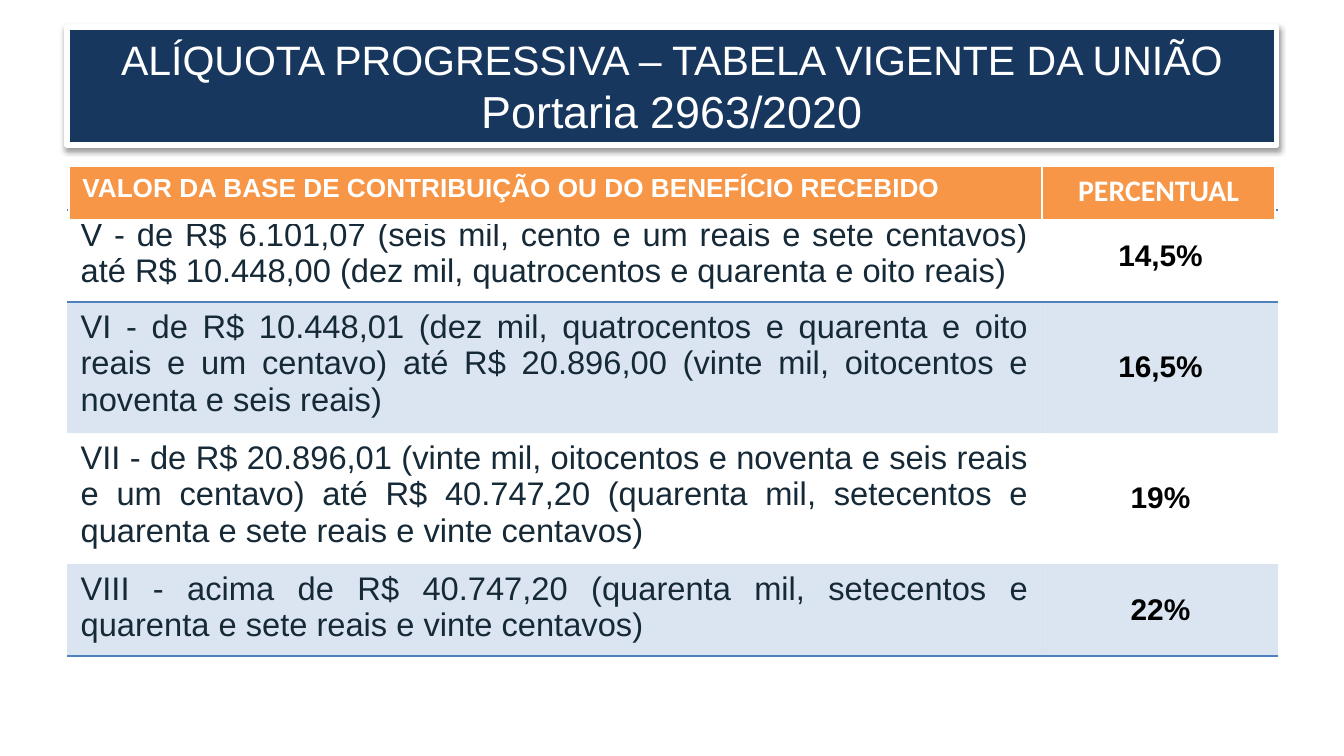
from lxml import etree
from pptx import Presentation
from pptx.dml.color import RGBColor as RGB
from pptx.enum.shapes import MSO_SHAPE as SHAPE
from pptx.enum.text import MSO_ANCHOR as ANCHOR, PP_ALIGN as ALIGN
from pptx.oxml import parse_xml
from pptx.oxml.ns import nsdecls, qn
from pptx.util import Pt

WHITE = RGB(0xFF, 0xFF, 0xFF)
BLACK = RGB(0, 0, 0)
NAVY = RGB(0x17, 0x37, 0x5E)
BLUE = RGB(0x4F, 0x81, 0xBD)
ORANGE = RGB(0xF7, 0x96, 0x46)
INK = RGB(0x16, 0x29, 0x37)

RATES = [
    ("V - de R$ 6.101,07 (seis mil, cento e um reais e sete centavos) até "
     "R$ 10.448,00 (dez mil, quatrocentos e quarenta e oito reais)", "14,5%"),
    ("VI - de R$ 10.448,01 (dez mil, quatrocentos e quarenta e oito reais e um "
     "centavo) até R$ 20.896,00 (vinte mil, oitocentos e noventa e seis reais)", "16,5%"),
    ("VII - de R$ 20.896,01 (vinte mil, oitocentos e noventa e seis reais e um "
     "centavo) até R$ 40.747,20 (quarenta mil, setecentos e quarenta e sete reais "
     "e vinte centavos)", "19%"),
    ("VIII - acima de R$ 40.747,20 (quarenta mil, setecentos e quarenta e sete "
     "reais e vinte centavos)", "22%"),
]
ROW_HEIGHTS = [49.3, 70.2, 70.2, 49.3]


def add_text(p, text, size, color, font="Arial", bold=False, align=ALIGN.LEFT):
    p.alignment = align
    r = p.add_run()
    r.text = text
    f = r.font
    f.name, f.size, f.bold = font, Pt(size), bold
    f.color.rgb = color


def set_borders(cell, **borders):
    """Take L, R, T, B as (colour, width); a side left out gets no line."""
    tcPr = cell._tc.get_or_add_tcPr()
    for i, side in enumerate("LRTB"):
        color, width = borders.get(side, (None, 0))
        fill = (f'<a:solidFill><a:srgbClr val="{color}"/></a:solidFill>'
                if color is not None else "<a:noFill/>")
        tcPr.insert(i, parse_xml(
            f'<a:ln{side} {nsdecls("a")} w="{Pt(width)}">{fill}</a:ln{side}>'))


def set_fill(cell, color=None, opacity=100):
    if color is None:
        cell.fill.background()
        return
    cell.fill.solid()
    cell.fill.fore_color.rgb = color
    if opacity < 100:
        clr = cell._tc.tcPr.find(qn("a:solidFill"))[0]
        etree.SubElement(clr, qn("a:alpha")).set("val", str(opacity * 1000))


def new_table(s, x, y, col_widths, row_heights):
    table = s.shapes.add_table(len(row_heights), len(col_widths), Pt(x), Pt(y),
                               Pt(sum(col_widths)), Pt(sum(row_heights))).table
    table.first_row = table.horz_banding = False
    for col, width in zip(table.columns, col_widths):
        col.width = Pt(width)
    for row, height in zip(table.rows, row_heights):
        row.height = Pt(height)
    return table


def add_title(s, x, y, w, h):
    sp = s.shapes.add_shape(SHAPE.RECTANGLE, Pt(x), Pt(y), Pt(w), Pt(h))
    sp.fill.solid()
    sp.fill.fore_color.rgb = NAVY
    sp.line.color.rgb = WHITE
    sp.line.width = Pt(3)
    # Soft shadow straight below
    sp._element.spPr.append(parse_xml(
        f'<a:effectLst {nsdecls("a")}><a:outerShdw blurRad="{Pt(3.1)}" '
        f'dist="{Pt(1.6)}" dir="5400000" rotWithShape="0"><a:srgbClr val="{BLACK}">'
        '<a:alpha val="38000"/></a:srgbClr></a:outerShdw></a:effectLst>'))
    tf = sp.text_frame
    tf.word_wrap = True
    tf.vertical_anchor = ANCHOR.MIDDLE
    p = tf.paragraphs[0]
    add_text(p, "ALÍQUOTA PROGRESSIVA – TABELA VIGENTE DA UNIÃO", 22, WHITE,
             align=ALIGN.CENTER)
    p.add_line_break()
    add_text(p, "Portaria 2963/2020", 24, WHITE, align=ALIGN.CENTER)


def add_rates(s, x, y, w, rate_w):
    table = new_table(s, x, y, [w - rate_w, rate_w], ROW_HEIGHTS)
    rule = (BLUE, 1)
    last = len(RATES) - 1
    for i, (bracket, rate) in enumerate(RATES):
        borders = {}
        if i == 0:
            borders["T"] = rule
        if i in (0, last):
            borders["B"] = rule
        if i == 1:
            borders["T"] = rule
        left, right = table.cell(i, 0), table.cell(i, 1)
        for cell in (left, right):
            set_borders(cell, **borders)
            set_fill(cell, BLUE if i % 2 else None, 20)
        add_text(left.text_frame.paragraphs[0], bracket, 17.5, INK,
                 align=ALIGN.JUSTIFY)
        right.vertical_anchor = ANCHOR.MIDDLE
        add_text(right.text_frame.paragraphs[0], rate, 16, BLACK, bold=True,
                 align=ALIGN.CENTER)


def add_header(s, x, y, w, h, rate_w):
    table = new_table(s, x, y, [w - rate_w, rate_w], [h])
    left, right = table.cell(0, 0), table.cell(0, 1)
    thin = (WHITE, 1)
    for cell in (left, right):
        set_borders(cell, L=thin, R=thin, T=thin, B=(WHITE, 3))
        set_fill(cell, ORANGE)
    add_text(left.text_frame.paragraphs[0],
             "VALOR DA BASE DE CONTRIBUIÇÃO OU DO BENEFÍCIO RECEBIDO", 14, WHITE,
             bold=True)
    add_text(right.text_frame.paragraphs[0], "PERCENTUAL", 16, WHITE,
             font="Calibri", bold=True, align=ALIGN.CENTER)


def main():
    prs = Presentation()
    prs.slide_width, prs.slide_height = Pt(720), Pt(405)
    s = prs.slides.add_slide(prs.slide_layouts[6])
    add_title(s, 36, 14.4, 648, 63.4)
    add_rates(s, 36, 112.5, 648.7, rate_w=126)
    # The header lies over the top edge of the rates
    add_header(s, 36.9, 89.3, 646.2, 29.4, rate_w=124.8)
    prs.save("out.pptx")


if __name__ == "__main__":
    main()
